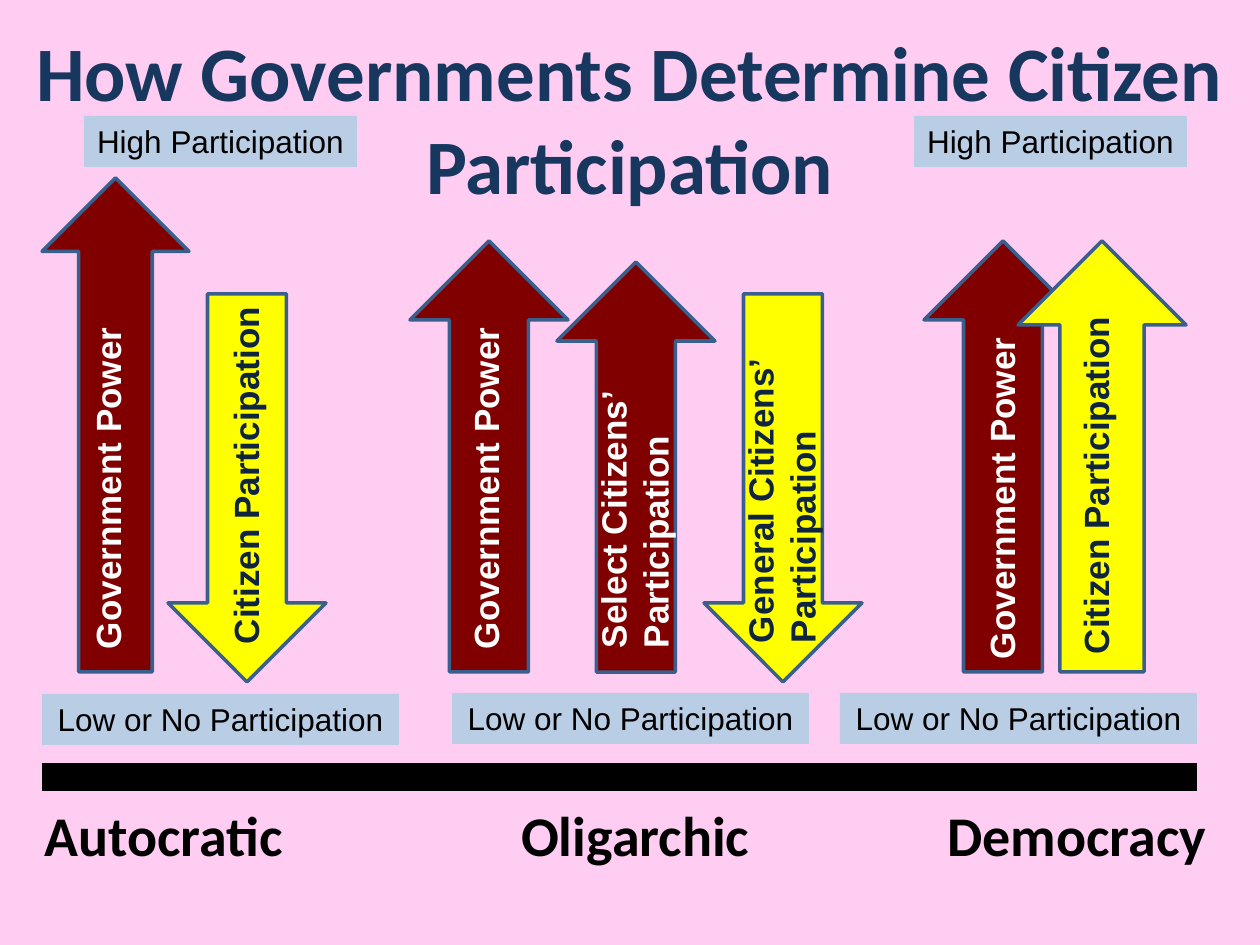
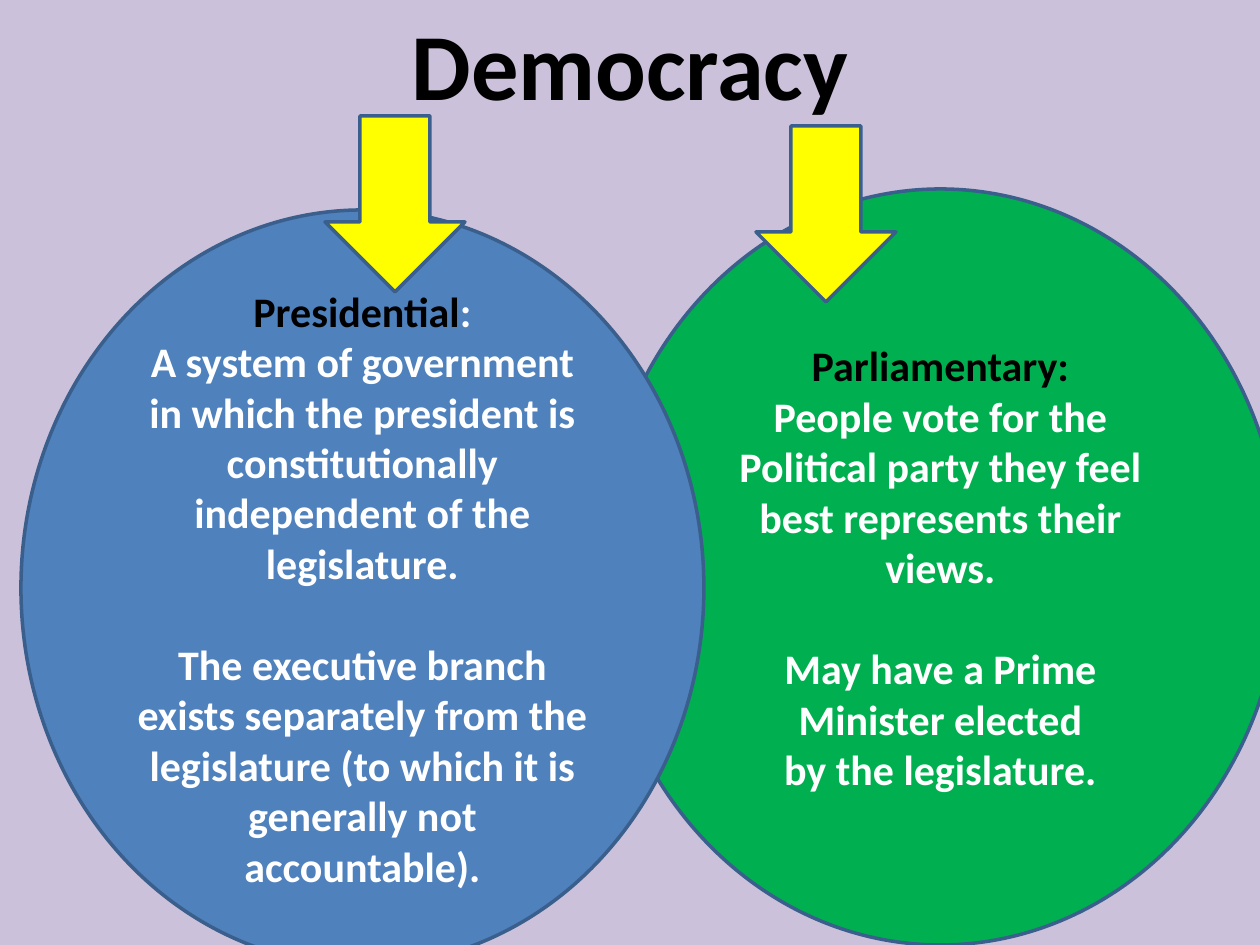
from lxml.etree import SubElement
from pptx import Presentation
from pptx.dml.color import RGBColor
from pptx.enum.shapes import MSO_CONNECTOR, MSO_SHAPE
from pptx.enum.text import MSO_ANCHOR, PP_ALIGN
from pptx.oxml.ns import qn
from pptx.util import Pt

PX = 914400 / 126

PINK = RGBColor(0xFF, 0xCD, 0xF2)
LILAC = RGBColor(0xCC, 0xC1, 0xDA)
NAVY = RGBColor(0x17, 0x37, 0x5E)
DARK_NAVY = RGBColor(0x0F, 0x24, 0x3E)
OUTLINE = RGBColor(0x3A, 0x5F, 0x8C)
MAROON = RGBColor(0x80, 0x00, 0x00)
YELLOW = RGBColor(0xFF, 0xFF, 0x00)
PALE_BLUE = RGBColor(0xB9, 0xCD, 0xE5)
BLUE = RGBColor(0x4F, 0x81, 0xBD)
GREEN = RGBColor(0x00, 0xB0, 0x50)
BLACK = RGBColor(0, 0, 0)
WHITE = RGBColor(0xFF, 0xFF, 0xFF)

UP, DOWN = MSO_SHAPE.UP_ARROW, MSO_SHAPE.DOWN_ARROW


def add_box(slide, box, kind=None, fill=None, line=None):
    """Add a preset shape, or a text box when no kind is given; box is in px."""
    place = [round(length * PX) for length in box]
    if kind is None:
        shape = slide.shapes.add_textbox(*place)
    else:
        shape = slide.shapes.add_shape(kind, *place)
        shape.shadow.inherit = False
        shape.fill.solid()
        shape.fill.fore_color.rgb = fill
        if line is None:
            shape.line.fill.background()
        else:
            shape.line.color.rgb = line
            shape.line.width = Pt(2)
    shape.text_frame.word_wrap = True
    return shape


def write(shape, text, size, color, font="Calibri", bold=True,
          align=PP_ALIGN.CENTER, anchor=MSO_ANCHOR.TOP):
    shape.text_frame.text = text
    shape.text_frame.vertical_anchor = anchor
    for paragraph in shape.text_frame.paragraphs:
        paragraph.alignment = align
        paragraph.font.size = Pt(size)
        paragraph.font.name = font
        paragraph.font.bold = bold
        paragraph.font.color.rgb = color
    return shape.text_frame.paragraphs


prs = Presentation()
prs.slide_width = round(1260 * PX)
prs.slide_height = round(945 * PX)
participation, democracy = [prs.slides.add_slide(prs.slide_layouts[6]) for _ in range(2)]
for slide, background in ((participation, PINK), (democracy, LILAC)):
    slide.background.fill.solid()
    slide.background.fill.fore_color.rgb = background

# Slide 1: power and participation along the scale of governments
write(add_box(participation, (0, 38, 1260, 158)),
      "How Governments Determine Citizen Participation", 44, NAVY, anchor=MSO_ANCHOR.MIDDLE)

scale_bar = participation.shapes.add_connector(
    MSO_CONNECTOR.STRAIGHT, *[round(length * PX) for length in (42, 777, 1197, 777)])
scale_bar.line.color.rgb = BLACK
scale_bar.line.width = Pt(16)
SubElement(scale_bar._element.spPr, qn("a:effectLst"))

for government, x, width, align in (
    ("Autocratic", 32, 305, PP_ALIGN.LEFT),
    ("Oligarchic", 473, 325, PP_ALIGN.CENTER),
    ("Democracy", 935, 325, PP_ALIGN.LEFT),
):
    write(add_box(participation, (x, 794, width, 110)), government, 32, BLACK, align=align)

# label, arrow kind, arrow box, label centre, label thickness
forces = (
    ("Government Power", UP, (42, 178, 147, 494), (108, 470), 56),
    ("Citizen Participation", DOWN, (168, 294, 158, 388), (246, 465), 56),
    ("Government Power", UP, (410, 241, 158, 431), (486, 470), 56),
    ("General Citizens’ Participation", DOWN, (704, 294, 158, 388), (781, 464), 97),
    ("Select Citizens’ Participation", UP, (557, 262, 158, 410), (634, 469), 97),
    ("Government Power", UP, (924, 241, 158, 431), (1002, 480), 56),
    ("Citizen Participation", UP, (1018, 241, 168, 431), (1096, 475), 56),
)
LABEL_LENGTH = 383
for label, kind, arrow_box, (center_x, center_y), thickness in forces:
    ruling = label.startswith(("Government", "Select"))
    add_box(participation, arrow_box, kind, MAROON if ruling else YELLOW, OUTLINE)
    force_label = add_box(participation, (center_x - LABEL_LENGTH / 2, center_y - thickness / 2,
                                          LABEL_LENGTH, thickness))
    force_label.rotation = 270
    write(force_label, label, 20, WHITE if ruling else DARK_NAVY, "Arial", align=PP_ALIGN.LEFT)

for level, x, y, width in (
    ("High Participation", 84, 116, 273),
    ("High Participation", 914, 116, 273),
    ("Low or No Participation", 42, 694, 357),
    ("Low or No Participation", 452, 693, 357),
    ("Low or No Participation", 840, 693, 357),
):
    level_tag = add_box(participation, (x, y, width, 51), MSO_SHAPE.RECTANGLE, PALE_BLUE)
    write(level_tag, level, 18, BLACK, "Arial", bold=False)
    level_tag.text_frame.word_wrap = False

# Slide 2: the two kinds of democracy
write(add_box(democracy, (0, 0, 1260, 110)), "Democracy", 54, BLACK)

systems = (
    ("Parliamentary", BLACK, (599, 189), GREEN,
     ("People vote for the Political party they feel best represents their views.",
      "May have a Prime Minister elected",
      "by the legislature.")),
    ("Presidential", WHITE, (21, 210), BLUE,
     ("A system of government in which the president is constitutionally independent "
      "of the legislature.",
      "The executive branch exists separately from the legislature "
      "(to which it is generally not accountable).")),
)
for system, colon_color, (x, y), fill, facts in systems:
    circle = add_box(democracy, (x, y, 683, 756), MSO_SHAPE.OVAL, fill, OUTLINE)
    paragraphs = write(circle, "\n".join((system, *facts)), 24, WHITE, anchor=MSO_ANCHOR.MIDDLE)
    heading = paragraphs[0]
    heading.runs[0].font.color.rgb = BLACK
    colon = heading.add_run()
    colon.text = ":"
    colon.font.color.rgb = colon_color
    paragraphs[2].space_before = Pt(29)

for x, y in ((325, 116), (756, 126)):
    add_box(democracy, (x, y, 140, 176), DOWN, YELLOW, OUTLINE)

prs.save("out.pptx")
